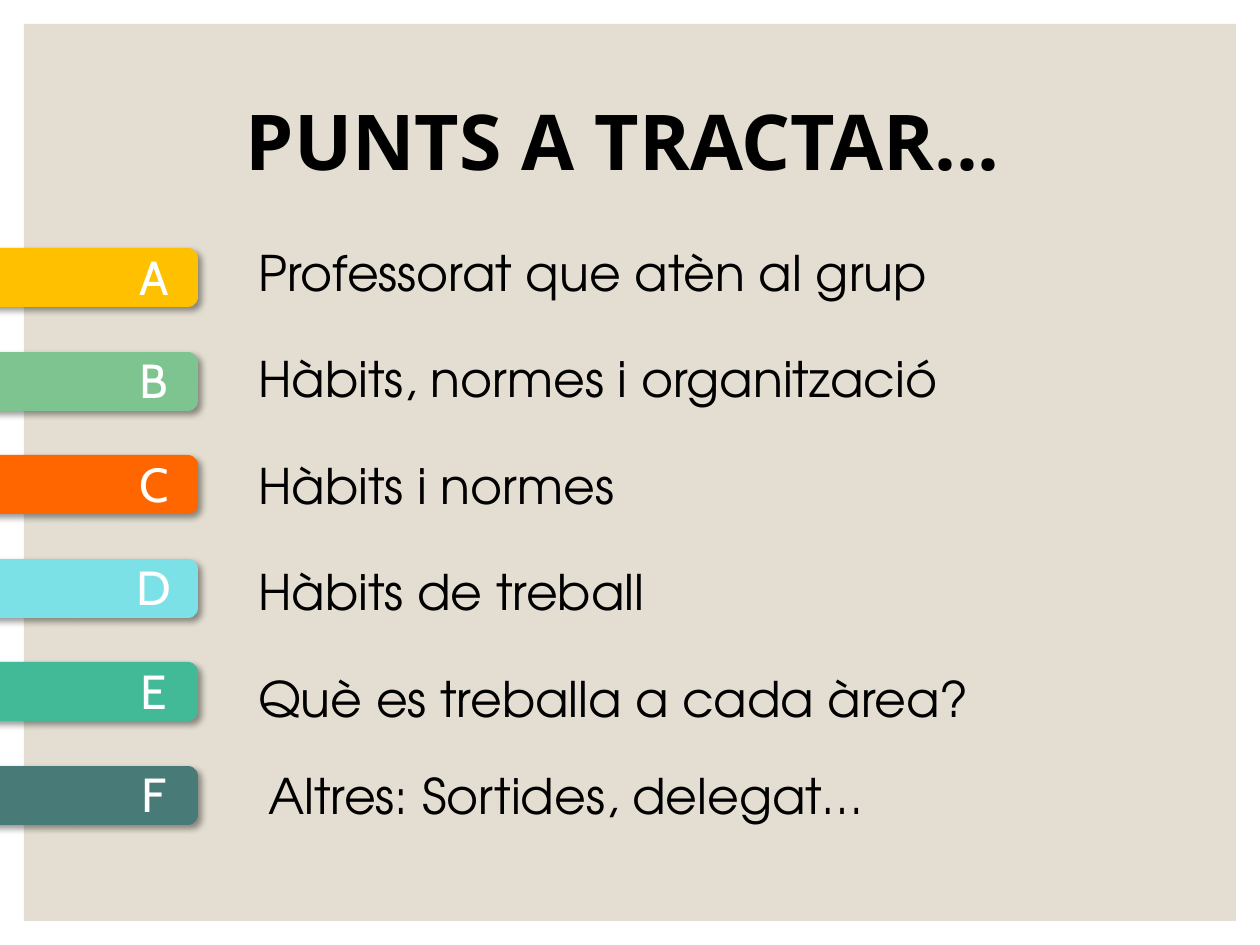
import pptx
import pptx.dml.color
import pptx.enum.shapes
import pptx.enum.text
import pptx.oxml
import pptx.util

PX = 914400 / 126
ALIGN = pptx.enum.text.PP_ALIGN
ANCHOR = pptx.enum.text.MSO_ANCHOR
SHAPE = pptx.enum.shapes.MSO_SHAPE

SHADOW = (
    '<a:effectLst xmlns:a="http://schemas.openxmlformats.org/drawingml/2006/main">'
    '<a:outerShdw blurRad="50800" dist="38100" dir="2700000" algn="tl" rotWithShape="0">'
    '<a:srgbClr val="000000"><a:alpha val="40000"/></a:srgbClr>'
    '</a:outerShdw></a:effectLst>'
)

presentation = pptx.Presentation()
presentation.slide_width = round(1260 * PX)
presentation.slide_height = round(945 * PX)
slide = presentation.slides.add_slide(presentation.slide_layouts[6])


def add_block(kind, box, color):
    shape = slide.shapes.add_shape(kind, *[round(value * PX) for value in box])
    shape.shadow.inherit = False
    shape.fill.solid()
    shape.fill.fore_color.rgb = pptx.dml.color.RGBColor.from_string(color)
    shape.line.fill.background()
    return shape


def add_text(text, box, color, font, anchor=ANCHOR.MIDDLE, **paragraph_format):
    shape = slide.shapes.add_textbox(*[round(value * PX) for value in box])
    shape.text_frame.word_wrap = True
    shape.text_frame.vertical_anchor = anchor
    paragraph = shape.text_frame.paragraphs[0]
    for name, value in paragraph_format.items():
        setattr(paragraph, name, value)
    run = paragraph.add_run()
    run.text = text
    for name, value in font.items():
        setattr(run.font, name, value)
    run.font.color.rgb = pptx.dml.color.RGBColor.from_string(color)
    return shape


TITLE_FONT = {"name": "Open Sans", "size": pptx.util.Pt(44), "bold": True}
LETTER_FONT = {"name": "Cabin", "size": pptx.util.Pt(27.3)}
TOPIC_FONT = {"name": "TeX Gyre Adventor", "size": pptx.util.Pt(28)}

add_block(SHAPE.RECTANGLE, (24, 24, 1212, 897), "E3DED1")
add_text("PUNTS A TRACTAR...", (88, 78, 1071, 123), "000000", TITLE_FONT,
         alignment=ALIGN.CENTER)

# Letter, tab colour, topic, topic left, topic top
topics = [
    ("A", "FFC000", "Professorat que atèn al grup", 246, 236),
    ("B", "7DC491", "Hàbits, normes i organització", 246, 342),
    ("C", "FF6600", "Hàbits i normes", 246, 449),
    ("D", "7CE1E7", "Hàbits de treball", 246, 555),
    ("E", "42BA97", "Què es treballa a cada àrea?", 246, 662),
    ("F", "487B78", "Altres: Sortides, delegat…", 256, 759),
]
FIRST_TAB_TOP, LAST_TAB_TOP = 248, 766

for index, (letter, color, topic, topic_left, topic_top) in enumerate(topics):
    tab_top = FIRST_TAB_TOP + round((LAST_TAB_TOP - FIRST_TAB_TOP) * index / (len(topics) - 1))
    tab = add_block(SHAPE.ROUNDED_RECTANGLE, (-39, tab_top, 237, 59), color)
    tab.adjustments[0] = 0.17
    properties = tab.element.spPr
    properties.replace(properties.find(pptx.oxml.ns.qn("a:effectLst")),
                       pptx.oxml.parse_xml(SHADOW))
    add_text(letter, (105, tab_top - 3, 98, 69), "FFFFFF", LETTER_FONT,
             alignment=ALIGN.CENTER, line_spacing=0.9)
    topic_box = add_text(topic, (topic_left, topic_top, 816, 72), "000000", TOPIC_FONT,
                         anchor=ANCHOR.TOP)
    topic_box.text_frame.auto_size = pptx.enum.text.MSO_AUTO_SIZE.SHAPE_TO_FIT_TEXT

presentation.save("out.pptx")
